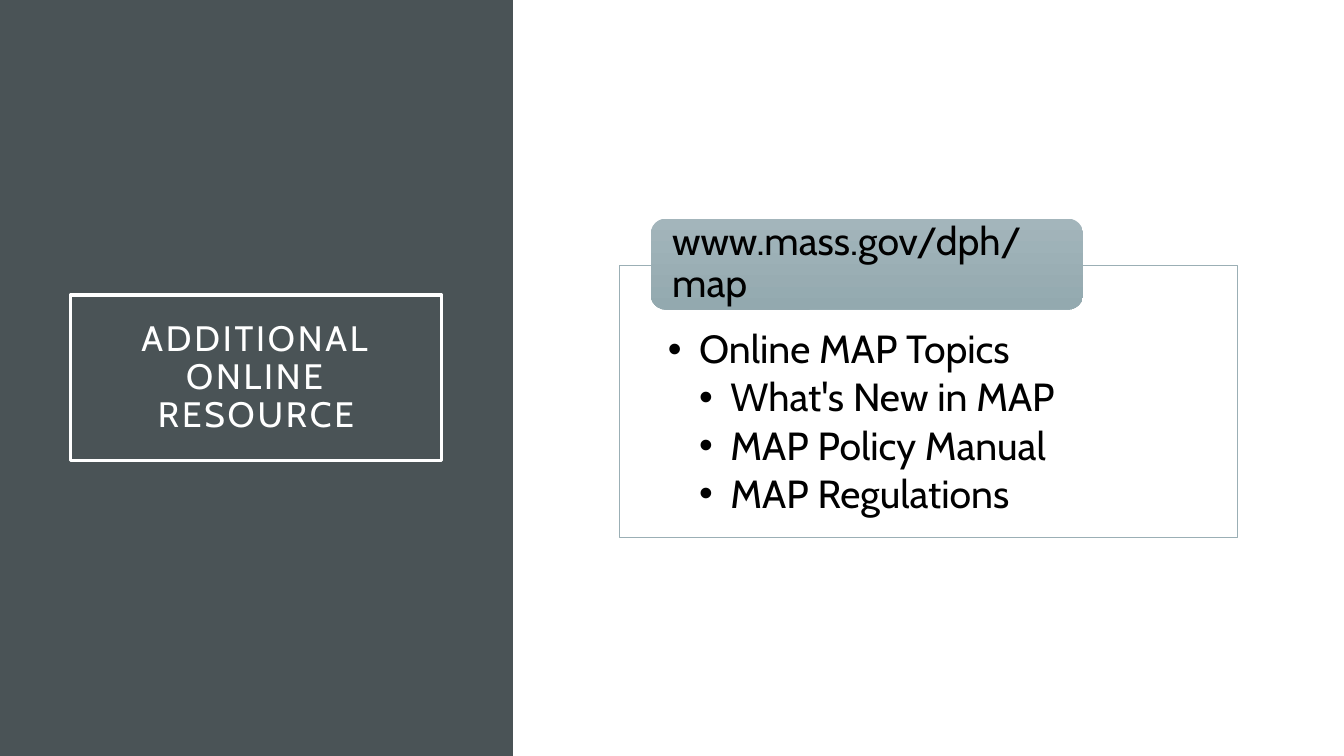
from lxml.etree import SubElement
from pptx import Presentation
from pptx.dml.color import RGBColor
from pptx.enum.shapes import MSO_SHAPE as Shape
from pptx.enum.text import MSO_ANCHOR as Anchor, PP_ALIGN as Align
from pptx.oxml.ns import qn
from pptx.util import Cm, Pt

SLATE = RGBColor(0x4A, 0x53, 0x56)
MIST = RGBColor(0x9B, 0xAF, 0xB5)
MIST_LIGHT = RGBColor(0xA3, 0xB5, 0xBB)
MIST_DARK = RGBColor(0x93, 0xA9, 0xAF)
WHITE = RGBColor(0xFF, 0xFF, 0xFF)
BLACK = RGBColor(0, 0, 0)

WIDTH, HEIGHT = 33.87, 19.05
TOPICS = [
    ("Online MAP Topics", 1),
    ("What's New in MAP", 2),
    ("MAP Policy Manual", 2),
    ("MAP Regulations", 2),
]


def add_box(slide, kind, box, fill=None, line=None, line_width=0.5):
    shape = slide.shapes.add_shape(kind, *(Cm(length) for length in box))
    shape.shadow.inherit = False
    if fill is None:
        shape.fill.background()
    else:
        shape.fill.solid()
        shape.fill.fore_color.rgb = fill
    if line is None:
        shape.line.fill.background()
    else:
        shape.line.color.rgb = line
        shape.line.width = Pt(line_width)
    return shape


def set_frame(shape, insets, anchor):
    frame = shape.text_frame
    frame.word_wrap = True
    frame.vertical_anchor = anchor
    (frame.margin_left, frame.margin_top,
     frame.margin_right, frame.margin_bottom) = (Cm(inset) for inset in insets)
    return frame


def add_run(paragraph, text, size, color):
    paragraph.line_spacing = 0.9
    run = paragraph.add_run()
    run.text = text
    run.font.name = "Cabin"
    run.font.size = Pt(size)
    run.font.color.rgb = color
    return run


def add_bullet(paragraph, level, indent):
    properties = paragraph._p.get_or_add_pPr()
    properties.set("marL", str(Cm(indent * level)))
    properties.set("indent", str(-Cm(indent)))
    SubElement(properties, qn("a:buFont"), typeface="Arial")
    SubElement(properties, qn("a:buChar"), char="•")


def add_title_panel(slide, left, top, width, height):
    add_box(slide, Shape.RECTANGLE, (left, top, width, height), SLATE)
    # Framed title, centred vertically in the panel
    title_height = 4.17
    title = add_box(slide, Shape.RECTANGLE,
                    (left + 1.78, top + (height - title_height) / 2, 9.35, title_height),
                    line=WHITE, line_width=2.5)
    paragraph = set_frame(title, [0.5] * 4, Anchor.MIDDLE).paragraphs[0]
    paragraph.alignment = Align.CENTER
    for index, text in enumerate(["ADDITIONAL", "ONLINE RESOURCE"]):
        if index:
            paragraph.add_line_break()
        run = add_run(paragraph, text, 25.2, WHITE)
        run.font._element.set("spc", "200")


def add_resource_card(slide, left, top, width, height):
    # Outlined card with the list of topics
    card = add_box(slide, Shape.RECTANGLE, (left, top, width, height), WHITE, MIST)
    frame = set_frame(card, (1.21, 1.63, 1.21, 0.56), Anchor.TOP)
    for index, (text, level) in enumerate(TOPICS):
        paragraph = frame.add_paragraph() if index else frame.paragraphs[0]
        paragraph.alignment = Align.LEFT
        paragraph.level = level - 1
        paragraph.space_after = Pt(4.2)
        add_run(paragraph, text, 28, BLACK)
        add_bullet(paragraph, level, 0.79)

    # Address tab straddling the card's top edge
    tab = add_box(slide, Shape.ROUNDED_RECTANGLE,
                  (left + 0.05 * width, top - 1.17, 0.7 * width, 2.29), MIST)
    tab.fill.gradient()
    tab.fill.gradient_angle = 270
    for stop, color in zip(tab.fill.gradient_stops, (MIST_LIGHT, MIST_DARK)):
        stop.color.rgb = color
    paragraph = set_frame(tab, (0.43, 0, 0.43, 0), Anchor.MIDDLE).paragraphs[0]
    paragraph.alignment = Align.LEFT
    add_run(paragraph, "www.mass.gov/dph/map", 28, BLACK)


def main():
    presentation = Presentation()
    presentation.slide_width, presentation.slide_height = Cm(WIDTH), Cm(HEIGHT)
    slide = presentation.slides.add_slide(presentation.slide_layouts[6])
    add_title_panel(slide, 0, 0, 12.93, HEIGHT)
    add_resource_card(slide, 15.62, 6.68, 15.57, 6.86)
    presentation.save("out.pptx")


if __name__ == "__main__":
    main()
